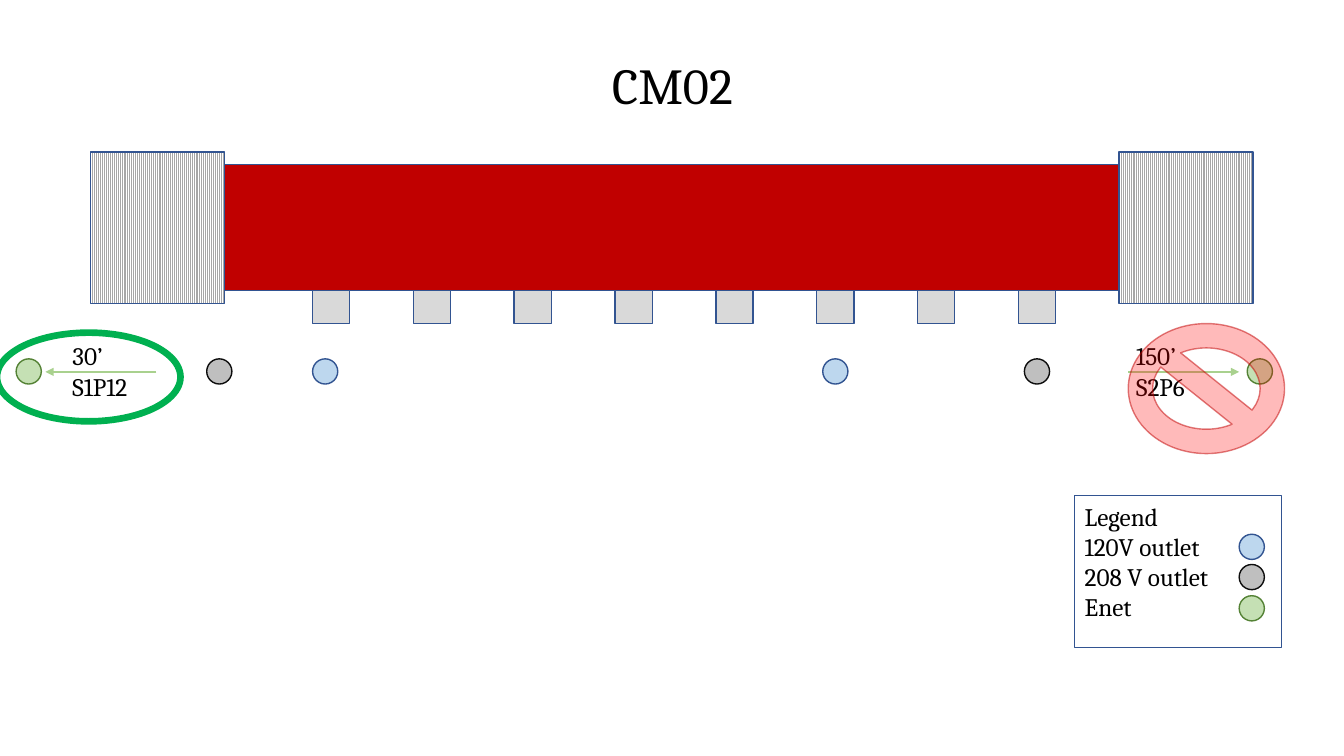
import pptx
import pptx.dml.color
import pptx.enum.dml
import pptx.enum.shapes
import pptx.enum.text
import pptx.oxml
import pptx.oxml.ns
import pptx.util

PX = 9144
FONT = "Cambria"
SHAPE = pptx.enum.shapes.MSO_SHAPE
NAVY = "325491"
OUTLET_120V = {"fill": "BDD7EE", "line": NAVY}
OUTLET_208V = {"fill": "BFBFBF", "line": "0D0D0D"}
ENET = {"fill": "C5E0B4", "line": "548235"}
OUTLET_SIZE = 25
OUTLET_TOP = 356


def px(*lengths):
    return [pptx.util.Emu(length * PX) for length in lengths]


def color(hex_code):
    return pptx.dml.color.RGBColor.from_string(hex_code)


def drawing_element(tag, **attributes):
    element = pptx.oxml.parse_xml(f"<a:{tag} {pptx.oxml.ns.nsdecls('a')}/>")
    for name, value in attributes.items():
        element.set(name, str(value))
    return element


def set_alpha(fill_format, percent):
    rgb = fill_format.fore_color
    hex_code = str(rgb.rgb)
    for srgb in fill_format._xPr.iter(pptx.oxml.ns.qn("a:srgbClr")):
        if srgb.get("val") == hex_code:
            srgb.append(drawing_element("alpha", val=percent * 1000))
            return


def add_block(shapes, kind, box, fill=None, line=NAVY, width=1):
    block = shapes.add_shape(kind, *px(*box))
    block.shadow.inherit = False
    if fill:
        block.fill.solid()
        block.fill.fore_color.rgb = color(fill)
    else:
        block.fill.background()
    block.line.color.rgb = color(line)
    block.line.width = pptx.util.Pt(width)
    return block


def add_outlet(shapes, left, top, style):
    add_block(shapes, SHAPE.OVAL, (left, top, OUTLET_SIZE, OUTLET_SIZE), **style)


def add_end_panel(shapes, left):
    panel = add_block(shapes, SHAPE.RECTANGLE, (left, 151, 133, 150))
    panel.fill.patterned()
    panel.fill.pattern = pptx.enum.dml.MSO_PATTERN.LIGHT_VERTICAL
    panel.fill.fore_color.rgb = color("A6A6A6")
    panel.fill.back_color.rgb = color("FFFFFF")


def add_run_arrow(shapes, start, end, y):
    arrow = shapes.add_connector(
        pptx.enum.shapes.MSO_CONNECTOR.STRAIGHT, *px(start, y, end, y))
    arrow.line.color.rgb = color("A9D18E")
    arrow.line.width = pptx.util.Pt(1.75)
    arrow.line._get_or_add_ln().append(drawing_element("tailEnd", type="triangle"))
    arrow._element.spPr.append(drawing_element("effectLst"))


def write_text(holder, text, size=18, align="LEFT", anchor="TOP"):
    frame = holder.text_frame
    frame.text = text
    frame.word_wrap = False
    frame.auto_size = pptx.enum.text.MSO_AUTO_SIZE.NONE
    frame.vertical_anchor = getattr(pptx.enum.text.MSO_ANCHOR, anchor)
    for paragraph in frame.paragraphs:
        paragraph.alignment = getattr(pptx.enum.text.PP_ALIGN, align)
        paragraph.font.name = FONT
        paragraph.font.size = pptx.util.Pt(size)
        paragraph.font.color.rgb = color("000000")


def add_title(slide):
    title = slide.shapes.title
    title.left, title.top, title.width, title.height = px(594, 48, 146, 71)
    write_text(title, "CM02", size=36, align="CENTER", anchor="MIDDLE")


def add_table_plan(slide):
    plan = slide.shapes.add_group_shape().shapes
    add_block(plan, SHAPE.RECTANGLE, (210, 163, 900, 125), "C00000")
    for seat in range(8):
        add_block(plan, SHAPE.RECTANGLE, (310 + 100 * seat, 288, 37, 33), "D9D9D9")
    for left in (90, 1110):
        add_end_panel(plan, left)


def add_legend(shapes):
    legend = add_block(shapes, SHAPE.RECTANGLE, (1066, 492, 205, 150), width=0.75)
    write_text(legend, "Legend\n120V outlet\n208 V outlet\nEnet")
    for row, style in enumerate((OUTLET_120V, OUTLET_208V, ENET)):
        add_outlet(shapes, 1229, 530 + round(30.5 * row), style)


def add_enet_label(shapes, text, left, width):
    label = shapes.add_textbox(*px(left, 333, width, 71))
    write_text(label, text)


def add_port_marks(shapes):
    add_block(shapes, SHAPE.OVAL, (-3, 330, 182, 88), line="00B050", width=4.75)
    blocked = add_block(
        shapes, SHAPE.NO_SYMBOL, (1119, 321, 155, 129), "FF0000", "C00000")
    set_alpha(blocked.fill, 27)
    set_alpha(blocked.line.fill, 50)


def main():
    deck = pptx.Presentation()
    deck.slide_width, deck.slide_height = px(1333, 750)
    slide = deck.slides.add_slide(deck.slide_layouts.get_by_name("Title Only"))
    shapes = slide.shapes

    add_table_plan(slide)
    add_title(slide)
    add_legend(shapes)
    add_run_arrow(shapes, 1119, 1229, 369)
    for style, lefts in ((OUTLET_120V, (310, 816)), (OUTLET_208V, (205, 1016))):
        for left in lefts:
            add_outlet(shapes, left, OUTLET_TOP, style)
    add_outlet(shapes, 16, OUTLET_TOP, ENET)
    add_run_arrow(shapes, 155, 45, 369)
    add_enet_label(shapes, "30’\nS1P12", 62, 89)
    add_enet_label(shapes, "150’\nS2P6", 1117, 75)
    add_outlet(shapes, 1237, OUTLET_TOP, ENET)
    add_port_marks(shapes)
    deck.save("out.pptx")


if __name__ == "__main__":
    main()
